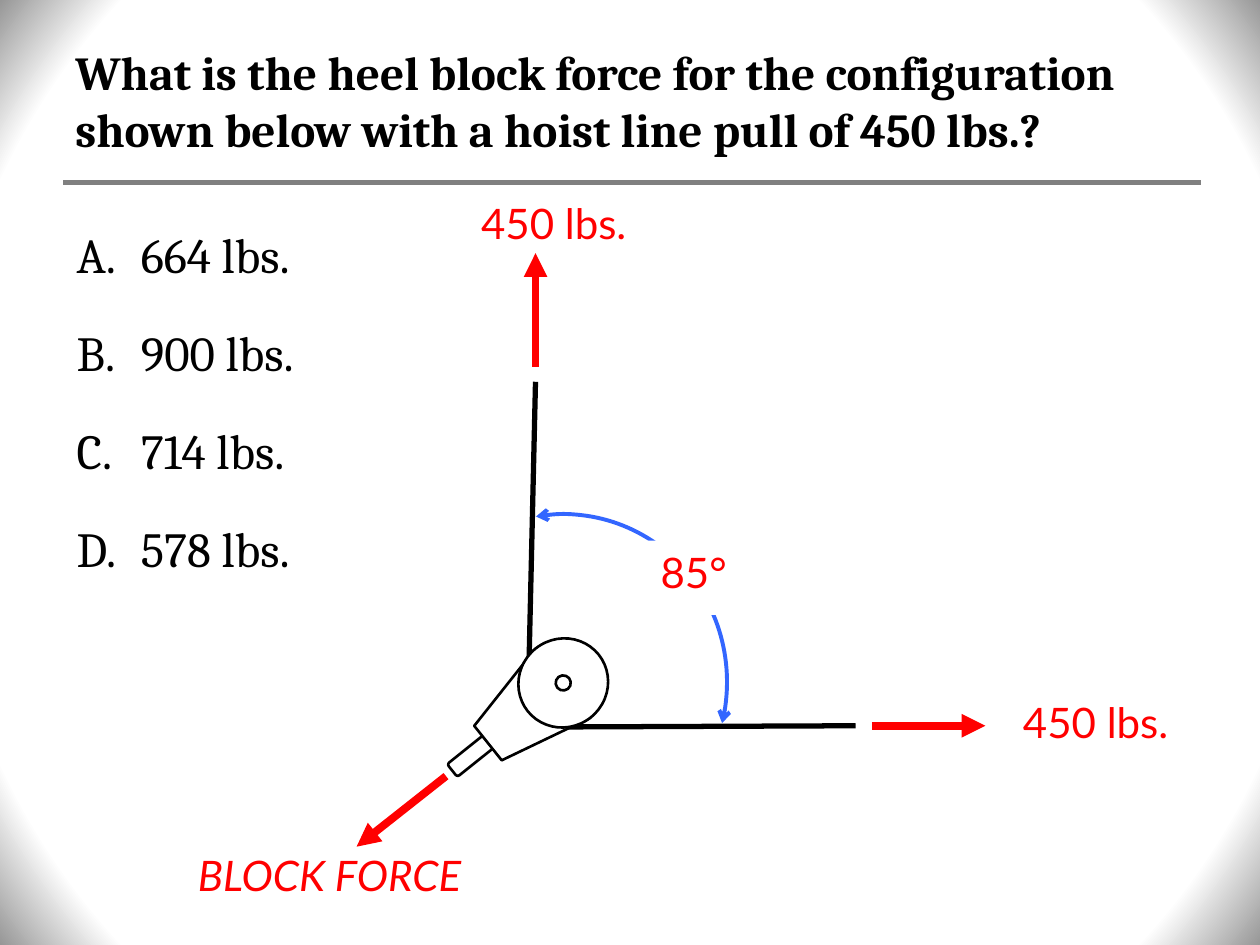
from lxml.etree import SubElement
from pptx import Presentation
from pptx.dml.color import RGBColor
from pptx.enum.shapes import MSO_CONNECTOR as CONNECTOR, MSO_SHAPE as SHAPE
from pptx.enum.text import MSO_ANCHOR as ANCHOR, PP_ALIGN as ALIGN
from pptx.oxml.ns import qn
from pptx.util import Inches, Pt

BLACK = RGBColor(0x00, 0x00, 0x00)
WHITE = RGBColor(0xFF, 0xFF, 0xFF)
EDGE_GRAY = RGBColor(0x97, 0x97, 0x97)
RULE_GRAY = RGBColor(0x80, 0x80, 0x80)
RED = RGBColor(0xFF, 0x00, 0x00)
BLUE = RGBColor(0x33, 0x66, 0xFF)

QUESTION = ("What is the heel block force for the configuration "
            "shown below with a hoist line pull of 450 lbs.?")
ANSWERS = ["664 lbs.", "900 lbs.", "714 lbs.", "578 lbs."]
BLOCK_ROTATION = 231.4


def set_background(slide):
    """Fade the slide from a white centre to gray corners."""
    fill = slide.background.fill
    fill.gradient()
    for stop, position, color in zip(fill.gradient_stops, (0.88, 1), (WHITE, EDGE_GRAY)):
        stop.position = position
        stop.color.rgb = color
    gradient = slide.element.find(".//" + qn("a:gradFill"))
    gradient.remove(gradient.find(qn("a:lin")))
    circle = SubElement(gradient, qn("a:path"), path="circle")
    SubElement(circle, qn("a:fillToRect"), l="50000", t="50000", r="50000", b="50000")


def add_arrowheads(shape, **ends):
    """Put arrowheads on the named line ends, headEnd before tailEnd."""
    line = shape.line._get_or_add_ln()
    for end, kind in ends.items():
        SubElement(line, qn(f"a:{end}"), type=kind)


def add_line(slide, start, end, color=BLACK, width=3):
    """Draw a straight line between two points."""
    connector = slide.shapes.add_connector(
        CONNECTOR.STRAIGHT, *map(Inches, start + end))
    connector.line.color.rgb = color
    connector.line.width = Pt(width)
    SubElement(connector._element.spPr, qn("a:effectLst"))
    return connector


def add_force(slide, start, end):
    """Draw a red force arrow pointing at its end."""
    connector = add_line(slide, start, end, RED, 4.5)
    effects = connector._element.spPr.find(qn("a:effectLst"))
    add_arrowheads(connector, tailEnd="triangle")
    connector._element.spPr.append(effects)


def add_part(slide, kind, box, rotation=BLOCK_ROTATION, fill=WHITE, color=BLACK, width=1.5):
    """Draw one outlined part of the diagram."""
    shape = slide.shapes.add_shape(kind, *map(Inches, box))
    shape.shadow.inherit = False
    shape.rotation = rotation
    if fill is None:
        shape.fill.background()
    else:
        shape.fill.solid()
        shape.fill.fore_color.rgb = fill
    shape.line.color.rgb = color
    shape.line.width = Pt(width)
    return shape


def add_text(slide, box, lines, font="Lato", size=24, color=RED, bold=False,
             italic=False, align=ALIGN.CENTER, anchor=ANCHOR.TOP, fill=None):
    """Add a wrapped text box with one paragraph per line."""
    shape = slide.shapes.add_textbox(*map(Inches, box))
    if fill is not None:
        shape.fill.solid()
        shape.fill.fore_color.rgb = fill
    frame = shape.text_frame
    frame.word_wrap = True
    frame.vertical_anchor = anchor
    frame.text = "\n".join(lines)
    for paragraph in frame.paragraphs:
        paragraph.alignment = align
        run_font = paragraph.runs[0].font
        run_font.name = font
        run_font.size = Pt(size)
        run_font.color.rgb = color
        run_font.bold = bold
        run_font.italic = italic
    return frame


def add_answers(slide):
    """List the answers with letters in front."""
    frame = add_text(slide, (0.51, 1.5, 2.91, 3), ANSWERS, font="Cambria",
                     size=28, color=BLACK, align=ALIGN.LEFT)
    indent = Inches(0.51)
    for paragraph in frame.paragraphs:
        paragraph.line_spacing = 1.5
        paragraph.space_before = Pt(5.6)
        properties = paragraph._p.get_or_add_pPr()
        properties.set("marL", str(indent))
        properties.set("indent", str(-indent))
        SubElement(properties, qn("a:buFont"), typeface="+mj-lt")
        SubElement(properties, qn("a:buAutoNum"), type="alphaUcPeriod")


def add_block(slide):
    """Draw the hoist lines and the heel block."""
    add_line(slide, (4.25, 3.03), (4.19, 5.64))
    add_line(slide, (6.79, 5.76), (4.42, 5.77))
    add_part(slide, SHAPE.ROUNDED_RECTANGLE, (3.68, 5.79, 0.13, 0.4))
    add_part(slide, SHAPE.TRAPEZOID, (3.82, 5.28, 0.7, 0.76))
    add_part(slide, SHAPE.OVAL, (4.12, 5.06, 0.7, 0.72))
    add_part(slide, SHAPE.OVAL, (4.41, 5.36, 0.12, 0.12), fill=None)


def add_angle(slide):
    """Draw the angle arc with its value on top."""
    arc = add_part(slide, SHAPE.ARC, (3.16, 4.08, 2.61, 2.68), rotation=6.4,
                   fill=None, color=BLUE, width=2.25)
    arc.adjustments[0] = 152.73
    arc.adjustments[1] = 4.64
    add_arrowheads(arc, headEnd="arrow", tailEnd="arrow")
    add_text(slide, (5.08, 4.29, 0.85, 0.59), ["85°"], fill=WHITE)


def main():
    """Build the slide and save it."""
    presentation = Presentation()
    presentation.slide_width = Inches(10)
    presentation.slide_height = Inches(7.5)
    slide = presentation.slides.add_slide(presentation.slide_layouts[6])
    set_background(slide)
    add_line(slide, (0.5, 1.45), (9.53, 1.45), RULE_GRAY)
    add_text(slide, (0.5, 0.17, 9, 1.25), [QUESTION], font="Cambria", size=27,
             color=BLACK, bold=True, align=ALIGN.LEFT, anchor=ANCHOR.MIDDLE)
    add_answers(slide)
    add_block(slide)
    add_force(slide, (3.54, 6.16), (2.83, 6.72))
    add_force(slide, (6.92, 5.76), (7.82, 5.76))
    add_force(slide, (4.25, 2.91), (4.25, 2.01))
    add_angle(slide)
    add_text(slide, (3.63, 1.52, 1.53, 0.55), ["450 lbs."])
    add_text(slide, (7.89, 5.48, 1.61, 0.55), ["450 lbs."])
    add_text(slide, (1.34, 6.69, 2.55, 0.7), ["BLOCK FORCE"], italic=True)
    presentation.save("out.pptx")


if __name__ == "__main__":
    main()
